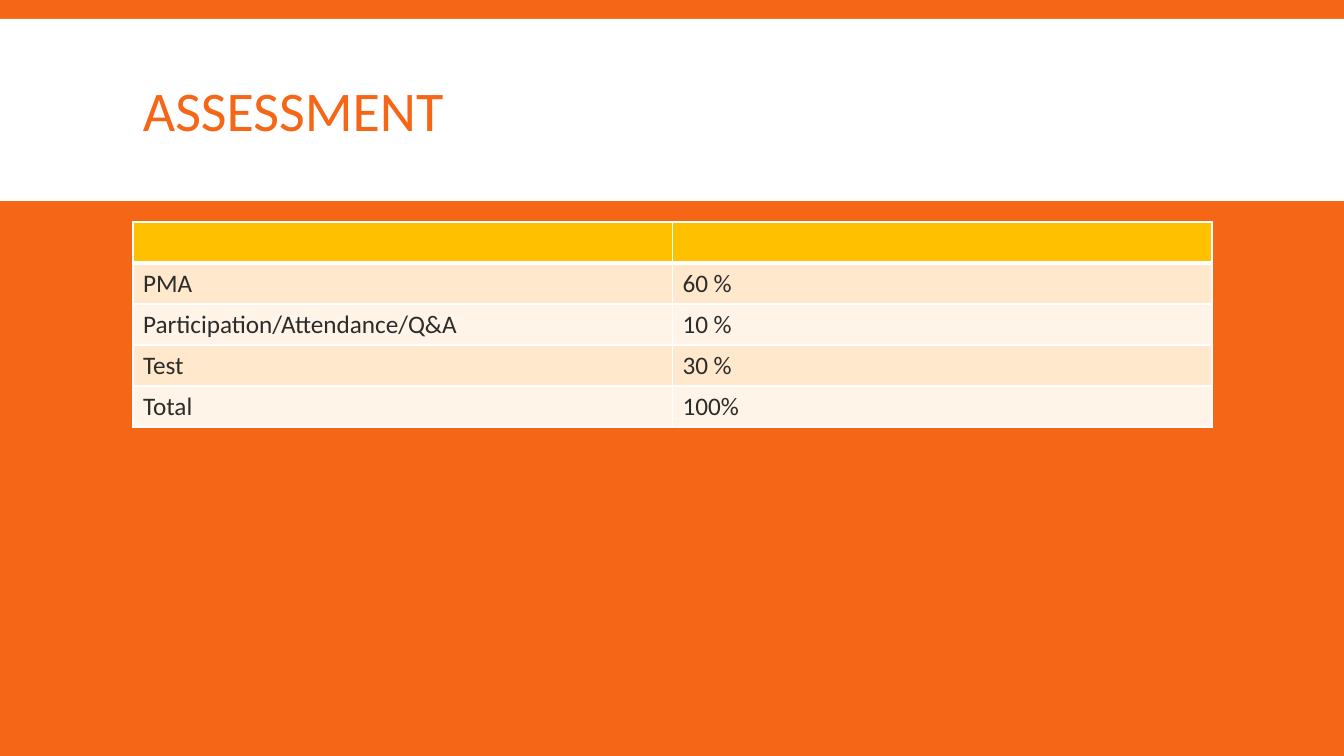
import pptx
import pptx.util
import pptx.dml.color
import pptx.enum.shapes
import pptx.enum.text
import pptx.oxml
import pptx.oxml.ns

# Content
TITLE = "ASSESSMENT"
ASSESSMENT_ROWS = [
    ("", ""),
    ("PMA", "60 %"),
    ("Participation/Attendance/Q&A", "10 %"),
    ("Test", "30 %"),
    ("Total", "100%"),
]

# Style
FONT = "Calibri"
ORANGE = pptx.dml.color.RGBColor(0xF5, 0x66, 0x17)
WHITE = pptx.dml.color.RGBColor(0xFF, 0xFF, 0xFF)
GOLD = pptx.dml.color.RGBColor(0xFF, 0xC0, 0x00)
PEACH = pptx.dml.color.RGBColor(0xFF, 0xE8, 0xCC)
CREAM = pptx.dml.color.RGBColor(0xFF, 0xF4, 0xE7)
INK = pptx.dml.color.RGBColor(0x2C, 0x2C, 0x2C)

# Layout in px
SLIDE_W, SLIDE_H = 1344, 756
BAND_TOP, BAND_H = 19, 182
CONTENT_LEFT, CONTENT_W = 133, 1079
TITLE_TOP, TITLE_H = 31, 166
TABLE_TOP, ROW_H = 222, 41


def px(length):
    return pptx.util.Emu(round(length * 12192000 / SLIDE_W))


def style_font(font, size, color):
    font.name = FONT
    font.size = pptx.util.Pt(size)
    font.color.rgb = color


def add_borders(cell, widths):
    properties = cell._tc.get_or_add_tcPr()
    for side in ("L", "R", "T", "B"):
        width = pptx.util.Pt(widths.get(side, 1))
        properties.append(pptx.oxml.parse_xml(
            f'<a:ln{side} {pptx.oxml.ns.nsdecls("a")} w="{width}">'
            f'<a:solidFill><a:srgbClr val="{WHITE}"/></a:solidFill></a:ln{side}>'))


def add_title(slide):
    band = slide.shapes.add_shape(
        pptx.enum.shapes.MSO_SHAPE.RECTANGLE,
        0, px(BAND_TOP), px(SLIDE_W), px(BAND_H))
    band.shadow.inherit = False
    band.fill.solid()
    band.fill.fore_color.rgb = WHITE
    band.line.fill.background()

    title = slide.shapes.add_textbox(
        px(CONTENT_LEFT), px(TITLE_TOP), px(CONTENT_W), px(TITLE_H))
    frame = title.text_frame
    frame.word_wrap = True
    frame.vertical_anchor = pptx.enum.text.MSO_ANCHOR.MIDDLE
    frame.text = TITLE
    frame.paragraphs[0].line_spacing = 0.85
    style_font(frame.paragraphs[0].runs[0].font, 40, ORANGE)


def add_assessment_table(slide):
    row_count, column_count = len(ASSESSMENT_ROWS), len(ASSESSMENT_ROWS[0])
    table = slide.shapes.add_table(
        row_count, column_count, px(CONTENT_LEFT), px(TABLE_TOP),
        px(CONTENT_W), px(ROW_H * row_count)).table
    table.first_row = False
    table.horz_banding = False

    for r, row in enumerate(ASSESSMENT_ROWS):
        # Thick rule between the header and the first row
        widths = {0: {"B": 3}, 1: {"T": 3}}.get(r, {})
        fill = GOLD if r == 0 else PEACH if r % 2 else CREAM
        for c, text in enumerate(row):
            cell = table.cell(r, c)
            add_borders(cell, widths)
            cell.fill.solid()
            cell.fill.fore_color.rgb = fill
            if text:
                cell.text_frame.text = text
                style_font(cell.text_frame.paragraphs[0].runs[0].font, 18, INK)


def main():
    deck = pptx.Presentation()
    deck.slide_width, deck.slide_height = px(SLIDE_W), px(SLIDE_H)
    slide = deck.slides.add_slide(deck.slide_layouts[6])
    slide.background.fill.solid()
    slide.background.fill.fore_color.rgb = ORANGE
    add_title(slide)
    add_assessment_table(slide)
    deck.save("out.pptx")


if __name__ == "__main__":
    main()
